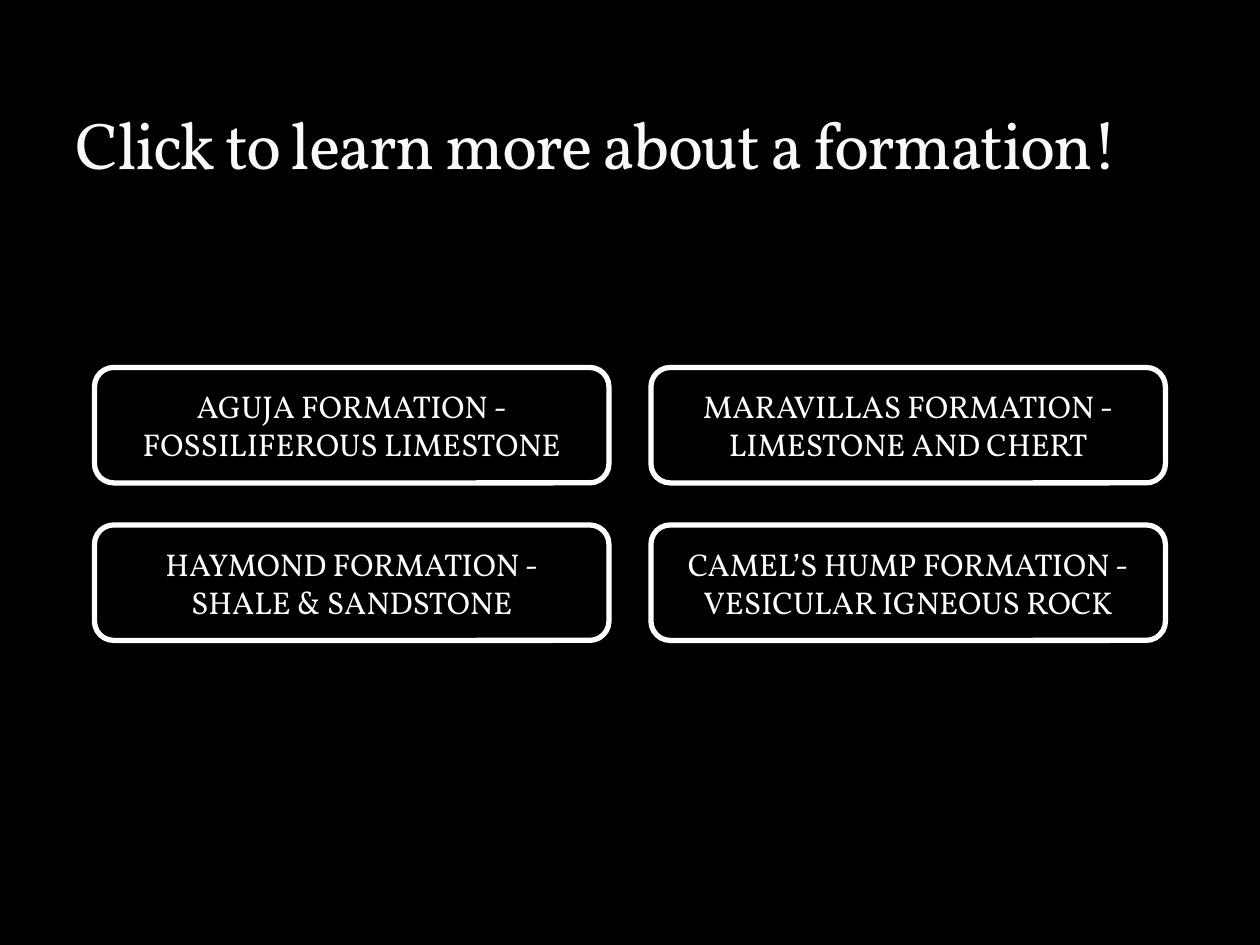
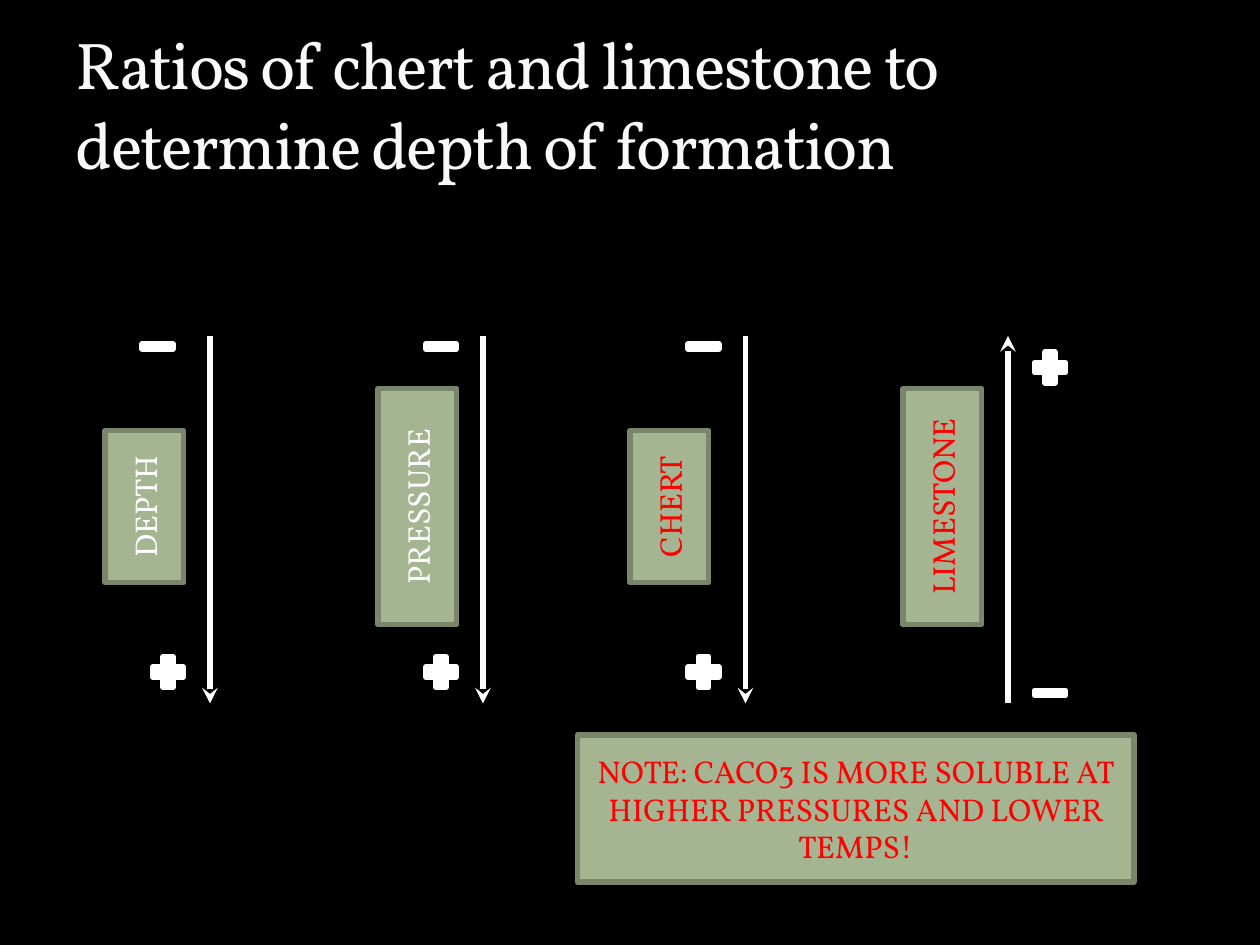
from lxml import etree
from pptx import Presentation
from pptx.dml.color import RGBColor
from pptx.enum import shapes, text
from pptx.oxml import ns
from pptx.util import Pt

BLACK, WHITE, TITLE_WHITE = "000000", "FFFFFF", "F9F9F9"
GREEN, DARK_GREEN, RED = "A5B592", "7A866C", "FF0000"
FONT = "Vollkorn"
LINE_WIDTH = 3
Kind = shapes.MSO_SHAPE

FORMATIONS_TITLE = "Click to learn more about a formation!"
FORMATIONS = [
    ("AGUJA FORMATION -", "FOSSILIFEROUS LIMESTONE"),
    ("MARAVILLAS FORMATION -", "LIMESTONE AND CHERT"),
    ("HAYMOND FORMATION -", "SHALE & SANDSTONE"),
    ("CAMEL’S HUMP FORMATION -", "VESICULAR IGNEOUS ROCK"),
]
BUTTON_LEFT, BUTTON_TOP, BUTTON_WIDTH, BUTTON_HEIGHT, BUTTON_GAP = 54, 210, 294, 66, 24

RATIOS_TITLE = "Ratios of chert and limestone to determine depth of formation"
NOTE = "NOTE: CACO3 IS MORE SOLUBLE AT HIGHER PRESSURES AND LOWER TEMPS!"
NOTE_BOX = (330, 420, 318, 84)
SCALES = [
    {"label": "DEPTH", "color": WHITE, "arrow": 120, "label_offset": 37.5, "length": 87,
     "minus": (-42, 192), "plus": (-36, 372), "rising": False},
    {"label": "PRESSURE", "color": WHITE, "arrow": 276, "label_offset": 37.5, "length": 135,
     "minus": (-36, 192), "plus": (-36, 372), "rising": False},
    {"label": "CHERT", "color": RED, "arrow": 426, "label_offset": 43.5, "length": 87,
     "minus": (-36, 192), "plus": (-36, 372), "rising": False},
    {"label": "LIMESTONE", "color": RED, "arrow": 576, "label_offset": 37.5, "length": 135,
     "minus": (12, 390), "plus": (12, 198), "rising": True},
]
ARROW_TOP, ARROW_BOTTOM = 192, 402
LABEL_MIDDLE, LABEL_THICKNESS = 289.5, 45
SIGN_WIDTH = 24


def rgb(value):
    return RGBColor.from_string(value)


def format_run(run, color, size):
    for name, value in {"name": FONT, "size": Pt(size), "bold": False}.items():
        setattr(run.font, name, value)
    run.font.color.rgb = rgb(color)


def add_box(parent, kind, box, fill, line, lines=(), color=WHITE, rotation=0):
    shape = parent.add_shape(kind, *map(Pt, box))
    shape.shadow.inherit = False
    shape.rotation = rotation
    shape.fill.solid()
    shape.fill.fore_color.rgb = rgb(fill)
    shape.line.color.rgb = rgb(line)
    shape.line.width = Pt(LINE_WIDTH)
    frame = shape.text_frame
    frame.word_wrap = True
    frame.vertical_anchor = text.MSO_ANCHOR.MIDDLE
    for index, words in enumerate(lines):
        paragraph = frame.add_paragraph() if index else frame.paragraphs[0]
        paragraph.alignment = text.PP_ALIGN.CENTER
        run = paragraph.add_run()
        run.text = words
        format_run(run, color, 18)
    return shape


def add_arrow(parent, x, start, end):
    arrow = parent.add_connector(shapes.MSO_CONNECTOR.STRAIGHT, Pt(x), Pt(start), Pt(x), Pt(end))
    arrow.line.color.rgb = rgb(WHITE)
    arrow.line.width = Pt(LINE_WIDTH)
    properties = arrow.element.spPr
    outline = properties.find(ns.qn("a:ln"))
    etree.SubElement(outline, ns.qn("a:tailEnd"), type="stealth")
    etree.SubElement(properties, ns.qn("a:effectLst"))


def add_slide(presentation, title_text):
    slide = presentation.slides.add_slide(presentation.slide_layouts[5])
    slide.background.fill.solid()
    slide.background.fill.fore_color.rgb = rgb(BLACK)
    title = slide.shapes.title
    for name, value in {"left": 36, "top": 12, "width": 648, "height": 96}.items():
        setattr(title, name, Pt(value))
    frame = title.text_frame
    frame.auto_size = text.MSO_AUTO_SIZE.NONE
    frame.word_wrap = True
    frame.vertical_anchor = text.MSO_ANCHOR.BOTTOM
    paragraph = frame.paragraphs[0]
    paragraph.alignment = text.PP_ALIGN.LEFT
    run = paragraph.add_run()
    run.text = title_text
    format_run(run, TITLE_WHITE, 37.8)
    run.font._element.set("spc", "-100")
    return slide


def add_formations(presentation):
    slide = add_slide(presentation, FORMATIONS_TITLE)
    for index, lines in enumerate(FORMATIONS):
        row, column = divmod(index, 2)
        box = (BUTTON_LEFT + column * (BUTTON_WIDTH + BUTTON_GAP),
               BUTTON_TOP + row * (BUTTON_HEIGHT + BUTTON_GAP), BUTTON_WIDTH, BUTTON_HEIGHT)
        add_box(slide.shapes, Kind.ROUNDED_RECTANGLE, box, BLACK, WHITE, lines)


def add_scale(slide, scale):
    parent = slide.shapes.add_group_shape().shapes
    x, length = scale["arrow"], scale["length"]
    ends = (ARROW_BOTTOM, ARROW_TOP) if scale["rising"] else (ARROW_TOP, ARROW_BOTTOM)
    add_arrow(parent, x, *ends)
    for name, kind, height in (("plus", Kind.MATH_PLUS, 24), ("minus", Kind.MATH_MINUS, 12)):
        offset, top = scale[name]
        add_box(parent, kind, (x + offset, top, SIGN_WIDTH, height), WHITE, WHITE)
    label_box = (x - scale["label_offset"] - length / 2, LABEL_MIDDLE - LABEL_THICKNESS / 2,
                 length, LABEL_THICKNESS)
    add_box(parent, Kind.RECTANGLE, label_box, GREEN, DARK_GREEN,
            [scale["label"]], scale["color"], rotation=270)


def add_ratios(presentation):
    slide = add_slide(presentation, RATIOS_TITLE)
    for scale in SCALES:
        add_scale(slide, scale)
    add_box(slide.shapes, Kind.RECTANGLE, NOTE_BOX, GREEN, DARK_GREEN, [NOTE], RED)


def main():
    presentation = Presentation()
    presentation.slide_width, presentation.slide_height = Pt(720), Pt(540)
    add_formations(presentation)
    add_ratios(presentation)
    presentation.save("out.pptx")


if __name__ == "__main__":
    main()
